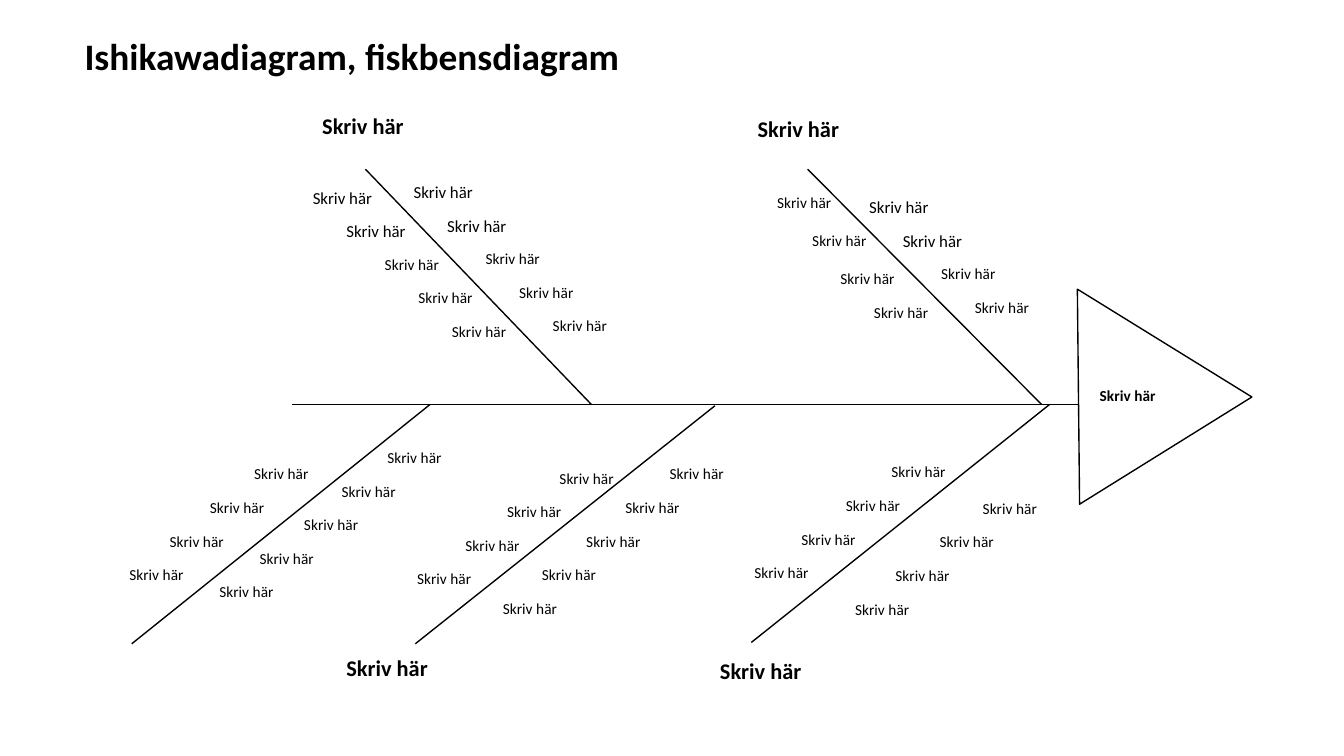
from lxml.etree import SubElement
from pptx import Presentation
from pptx.dml.color import RGBColor
from pptx.enum.shapes import MSO_CONNECTOR as Connector, MSO_SHAPE as Shape
from pptx.enum.text import MSO_ANCHOR as Anchor, MSO_AUTO_SIZE as AutoSize, PP_ALIGN as Align
from pptx.oxml.ns import qn
from pptx.util import Pt

BLACK = RGBColor(0, 0, 0)
WHITE = RGBColor(255, 255, 255)
FONT = "Calibri"
PROMPT = "Skriv här"
SMALL, MEDIUM = 8.25, 9
TWIG_STEP = 18

SPINE = (156.2, 216.8, 577.4, 216.8)
BONES = [
    (222.5, 344.9, 383, 217.4),
    (195.8, 90.7, 316.8, 216.7),
    (402.5, 344.2, 562.3, 216.7),
    (432.7, 90.7, 558, 216.7),
    (70.6, 344.9, 230.4, 216.7),
]
HEADINGS = [(141.1, 57.6), (374.4, 59), (154.1, 347.8), (354.2, 349.2)]

UPPER_TWIGS = [
    (100.8, 97.9, [MEDIUM] * 2 + [SMALL] * 3),
    (154.8, 95, [MEDIUM] * 2 + [SMALL] * 3),
    (398.9, 103, [MEDIUM] * 2 + [SMALL] * 2),
]
INNER_TWIGS = [(347, 100.8), (365.8, 121), (380.9, 141.8), (398.9, 159.8)]
LOWER_TWIGS = [
    (Align.RIGHT, 247, [230.4, 202.3, 180, 154.1]),
    (Align.RIGHT, 243.7, [408.2, 383.8, 360, 334.8]),
    (Align.LEFT, 263.2, [521.3, 498.2, 474.5, 452.9]),
    (Align.LEFT, 244.8, [353.5, 329.8, 308.9, 285.1, 264.2]),
    (Align.LEFT, 244.8, [131, 107.3, 85.7, 64.1]),
    (Align.LEFT, 236, [202.3, 177.8, 157.7, 133.9, 112.3]),
]


def add_line(slide, ends, width=0.75):
    line = slide.shapes.add_connector(Connector.STRAIGHT, *map(Pt, ends))
    line.line.color.rgb = BLACK
    line.line.width = Pt(width)
    SubElement(line._element.spPr, qn("a:effectLst"))


def add_head(slide):
    head = slide.shapes.add_shape(Shape.ISOSCELES_TRIANGLE, Pt(566.6), Pt(165.6), Pt(115.2), Pt(92.9))
    head.adjustments[0] = 0.51
    head.rotation = 89.4
    head.shadow.inherit = False
    head.fill.solid()
    head.fill.fore_color.rgb = WHITE
    head.line.color.rgb = BLACK
    head.line.width = Pt(0.75)


def add_text(slide, box, text, size, align=Align.LEFT, bold=False, insets=(5.2, 2.6), grow=False):
    shape = slide.shapes.add_textbox(*map(Pt, box))
    frame = shape.text_frame
    frame.word_wrap = True
    frame.auto_size = AutoSize.SHAPE_TO_FIT_TEXT if grow else AutoSize.NONE
    frame.vertical_anchor = Anchor.TOP
    frame.margin_left = frame.margin_right = Pt(insets[0])
    frame.margin_top = frame.margin_bottom = Pt(insets[1])
    paragraph = frame.paragraphs[0]
    paragraph.text = text
    paragraph.alignment = align
    font = paragraph.font
    font.name = FONT
    font.size = Pt(size)
    font.bold = bold
    font.color.rgb = BLACK
    return paragraph


def add_twig(slide, left, top, size=SMALL, align=Align.RIGHT):
    return add_text(slide, (left, top, 103.7, 16.6), PROMPT, size, align)


def add_upper_twigs(slide):
    for left, top, sizes in UPPER_TWIGS:
        for index, size in enumerate(sizes):
            offset = index * TWIG_STEP
            add_twig(slide, left + offset, top + offset, size)
    for left, top in INNER_TWIGS:
        add_twig(slide, left, top)


def add_lower_twigs(slide):
    for align, top, lefts in LOWER_TWIGS:
        for index, left in enumerate(lefts):
            paragraph = add_twig(slide, left, top + index * TWIG_STEP, align=align)
            paragraph.line_spacing = 1.15
            paragraph.space_after = Pt(7.5)


def main():
    presentation = Presentation()
    presentation.slide_width = Pt(720)
    presentation.slide_height = Pt(405)
    slide = presentation.slides.add_slide(presentation.slide_layouts[6])

    add_head(slide)
    add_line(slide, SPINE, 0.5)
    for bone in BONES:
        add_line(slide, bone)

    add_text(slide, (38.2, 14.4, 321.8, 51.1), "Ishikawadiagram, fiskbensdiagram", 20,
             bold=True, insets=(7.2, 3.6), grow=True)
    for left, top in HEADINGS:
        add_text(slide, (left, top, 106.6, 20.2), PROMPT, 12, Align.CENTER, bold=True, grow=True)
    add_text(slide, (583.9, 204.5, 68.4, 15.1), PROMPT, SMALL, bold=True, grow=True)
    add_upper_twigs(slide)
    add_lower_twigs(slide)

    presentation.save("out.pptx")


if __name__ == "__main__":
    main()
